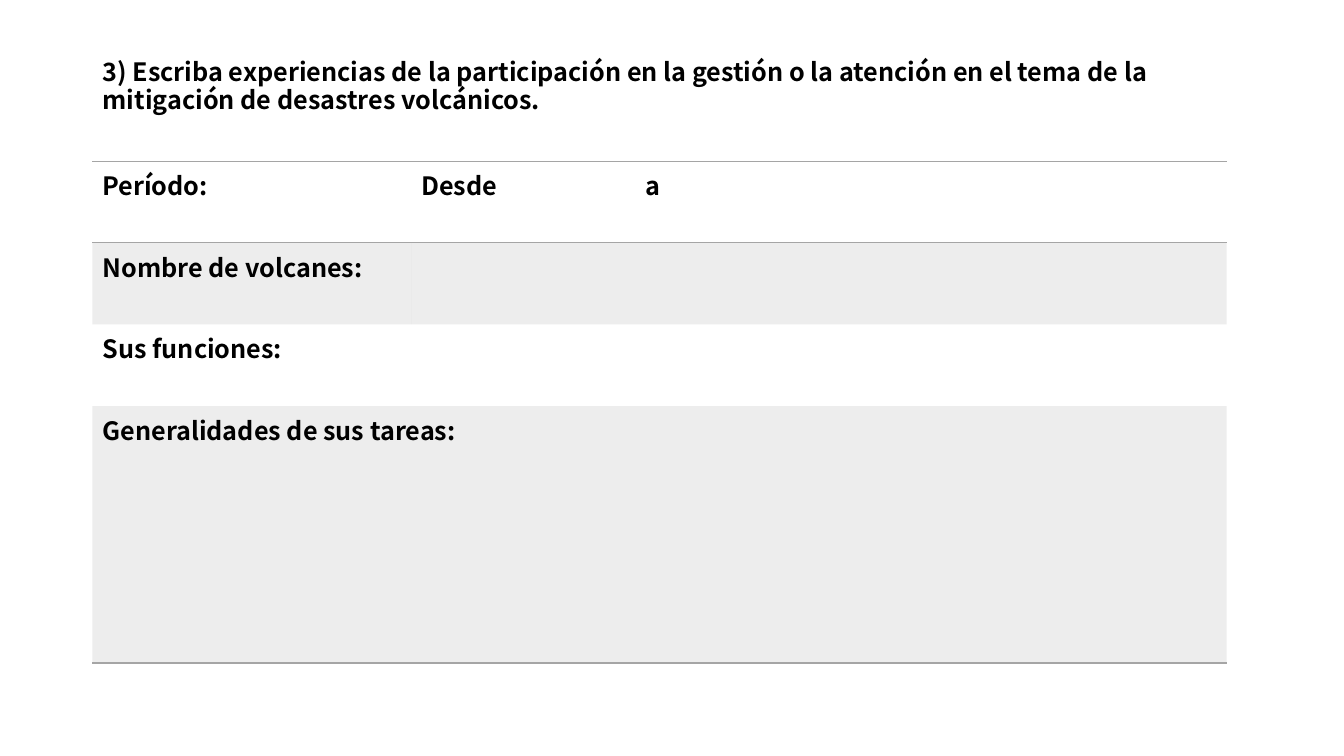
from lxml.etree import SubElement
from pptx import Presentation
from pptx.dml.color import RGBColor
from pptx.enum.text import MSO_ANCHOR, PP_ALIGN
from pptx.oxml import parse_xml
from pptx.oxml.ns import nsdecls, qn
from pptx.util import Cm, Pt

TYPEFACE = "Noto Sans CJK JP"
INK = "000000"
GRAY = "A5A5A5"
BAND_ALPHA = 20000
PLAIN_TABLE = "{2D5ABB26-0587-4C30-8999-92F81FD0307C}"

FORM_ROWS = [
    ("Período:", "Desde\ta"),
    ("Nombre de volcanes:", ""),
    ("Sus funciones:", ""),
    ("Generalidades de sus tareas:", ""),
]
LABEL_SHARE = 0.281
TASKS_SHARE = 0.512


def color(value):
    return RGBColor.from_string(value)


def write(frame, text, size=18, bold=True, ink=INK, spacing=1.0, tab=None):
    paragraph = frame.paragraphs[0]
    paragraph.alignment = PP_ALIGN.LEFT
    paragraph.line_spacing = spacing
    if tab is not None:
        stops = SubElement(paragraph._p.get_or_add_pPr(), qn("a:tabLst"))
        SubElement(stops, qn("a:tab"), pos=str(tab), algn="l")
    run = paragraph.add_run()
    run.text = text
    run.font.size = Pt(size)
    run.font.bold = bold
    run.font.name = TYPEFACE
    run.font.color.rgb = color(ink)
    SubElement(run._r.get_or_add_rPr(), qn("a:ea"), typeface=TYPEFACE)


def shade(cell):
    cell.fill.solid()
    cell.fill.fore_color.rgb = color(GRAY)
    tint = cell._tc.tcPr.find(".//" + qn("a:srgbClr"))
    SubElement(tint, qn("a:alpha"), val=str(BAND_ALPHA))


def rule(cell, *sides):
    for position, side in enumerate(sides):
        border = parse_xml(
            f'<a:{side} {nsdecls("a")} w="{Pt(1)}"><a:solidFill>'
            f'<a:srgbClr val="{GRAY}"/></a:solidFill></a:{side}>'
        )
        cell._tc.get_or_add_tcPr().insert(position, border)


def place_heading(slide, left, top, width, height):
    heading = slide.shapes.title
    heading.left, heading.top, heading.width, heading.height = left, top, width, height
    frame = heading.text_frame
    frame.word_wrap = True
    frame.vertical_anchor = MSO_ANCHOR.MIDDLE
    write(
        frame,
        "3) Escriba experiencias de la participación en la gestión o la atención "
        "en el tema de la mitigación de desastres volcánicos.",
        spacing=0.9,
    )


def place_form(slide, left, top, width, height):
    last = len(FORM_ROWS) - 1
    form = slide.shapes.add_table(len(FORM_ROWS), 2, left, top, width, height).table
    form.first_row = form.horz_banding = False
    form._tbl.tblPr.find(qn("a:tableStyleId")).text = PLAIN_TABLE

    label_width = int(width * LABEL_SHARE)
    form.columns[0].width = label_width
    form.columns[1].width = width - label_width
    tasks_height = int(height * TASKS_SHARE)

    for index, entries in enumerate(FORM_ROWS):
        form.rows[index].height = (
            tasks_height if index == last else (height - tasks_height) // last
        )
        for column, entry in enumerate(entries):
            cell = form.cell(index, column)
            if index % 2:
                shade(cell)
            else:
                cell.fill.background()
            if index == 0:
                rule(cell, "lnT", "lnB")
            elif index == last:
                rule(cell, "lnB")
            if entry:
                write(cell.text_frame, entry, tab=Cm(5.65) if "\t" in entry else None)
    form.cell(last, 0).merge(form.cell(last, 1))


def main():
    deck = Presentation()
    deck.slide_width, deck.slide_height = Cm(33.87), Cm(19.05)
    slide = deck.slides.add_slide(deck.slide_layouts[5])
    place_heading(slide, Cm(2.33), Cm(1.02), Cm(29.21), Cm(2.36))
    place_form(slide, Cm(2.33), Cm(4.06), Cm(28.58), Cm(12.65))
    deck.save("out.pptx")


if __name__ == "__main__":
    main()
